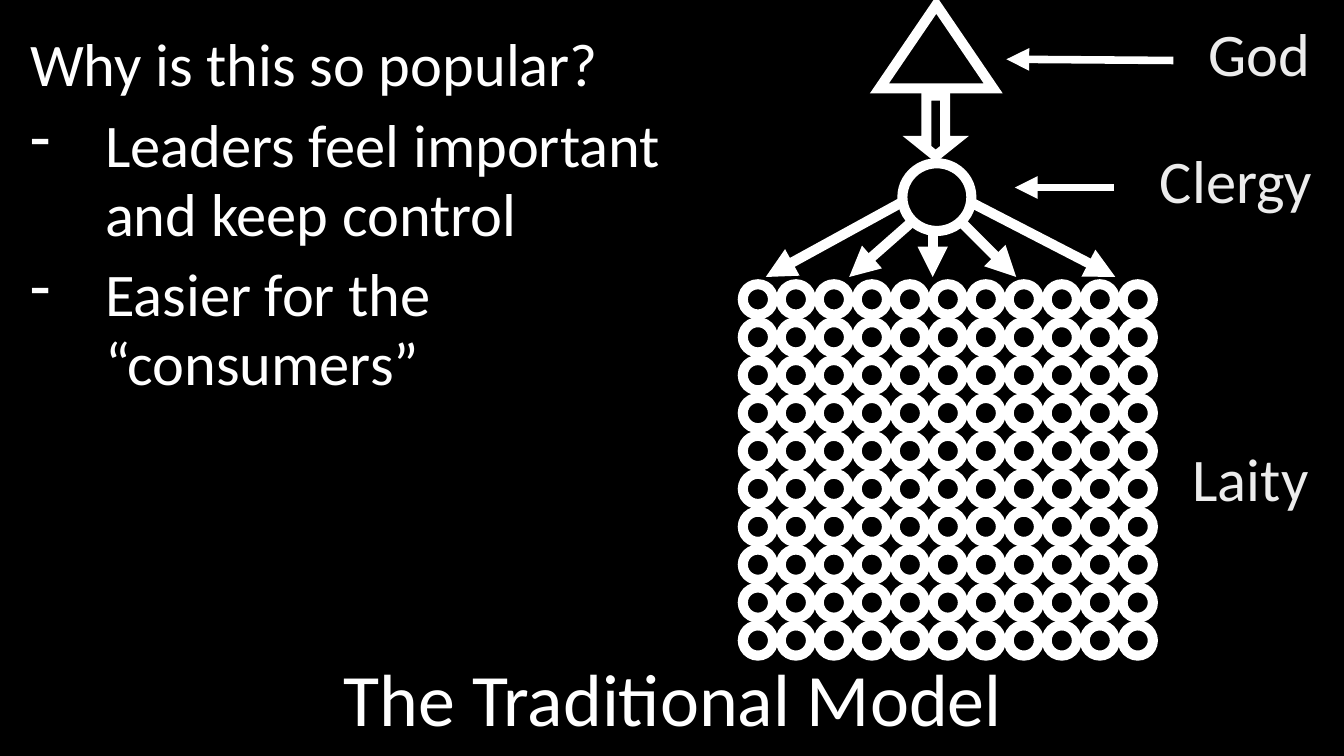
from dataclasses import dataclass
from lxml.etree import SubElement as Sub
from pptx import Presentation
from pptx.dml.color import RGBColor as Color
from pptx.enum.shapes import MSO_CONNECTOR as Link, MSO_SHAPE as Kind
from pptx.enum.text import MSO_ANCHOR as Anchor, PP_ALIGN as Align
from pptx.oxml.ns import qn
from pptx.util import Inches, Pt


@dataclass
class Theme:
    back = Color.from_string("000000")
    white = Color.from_string("FFFFFF")
    pale = Color.from_string("ECECEC")
    font = "Calibri"
    title = Pt(44)
    body = Pt(36)
    bold = Pt(6)
    thin = Pt(4.5)


def write(home, spot, lines, size, color):
    box = home.shapes.add_textbox(*map(Inches, spot))
    frame = box.text_frame
    frame.word_wrap = True
    for num, line in enumerate(lines):
        para = frame.add_paragraph() if num else frame.paragraphs[0]
        run = para.add_run()
        run.text = line
        run.font.name = Theme.font
        run.font.size = size
        run.font.color.rgb = color
    return frame


def arrow(home, start, end, width):
    line = home.shapes.add_connector(Link.STRAIGHT, *map(Inches, start + end))
    line.line.color.rgb = Theme.white
    line.line.width = width
    props = line.element.spPr
    Sub(props.find(qn("a:ln")), qn("a:tailEnd"), type="triangle")
    Sub(props, qn("a:effectLst"))


deck = Presentation()
deck.slide_width = Inches(11.11)
deck.slide_height = Inches(6.25)
slide = deck.slides.add_slide(deck.slide_layouts[6])
slide.background.fill.solid()
slide.background.fill.fore_color.rgb = Theme.back

title = write(slide, (0.15, 5.38, 10.83, 0.76), ["The Traditional Model"],
              Theme.title, Theme.white)
title.vertical_anchor = Anchor.MIDDLE
title.paragraphs[0].alignment = Align.CENTER

points = ["Why is this so popular?",
          "Leaders feel important and keep control",
          "Easier for the “consumers”"]
body = write(slide, (0.15, 0.21, 5.63, 5.07), points, Theme.body, Theme.white)
for num, para in enumerate(body.paragraphs):
    para.line_spacing = 0.95
    para.space_before = Pt(7)
    dent = Inches(0.62 if num else 0.38)
    props = para._p.get_or_add_pPr()
    props.set("marL", str(dent))
    props.set("indent", str(-dent))
    if num:
        Sub(props, qn("a:buChar"), char="-")

model = slide.shapes.add_group_shape()
parts = [(Kind.OVAL, (7.46, 1.35, 0.57, 0.56), []),
         (Kind.ISOSCELES_TRIANGLE, (7.27, 0.04, 0.94, 0.69), [0.5]),
         (Kind.DOWN_ARROW, (7.58, 0.79, 0.31, 0.5), [0.5, 0.4])]
cols, rows = 11, 10
for row in range(rows):
    for col in range(cols):
        left = 6.14 + 3.14 * col / (cols - 1)
        top = 2.35 + 2.82 * row / (rows - 1)
        parts.append((Kind.OVAL, (left, top, 0.25, 0.25), []))

for kind, spot, bends in parts:
    shape = model.shapes.add_shape(kind, *map(Inches, spot))
    shape.shadow.inherit = False
    shape.fill.background()
    shape.line.color.rgb = Theme.white
    shape.line.width = Theme.bold
    Sub(shape.element.spPr.find(qn("a:ln")), qn("a:miter"), lim="800000")
    for num, bend in enumerate(bends):
        shape.adjustments[num] = bend

rays = [((7.46, 1.67), (6.33, 2.29)),
        ((7.52, 1.85), (7.02, 2.29)),
        ((7.71, 1.92), (7.71, 2.29)),
        ((7.96, 1.85), (8.4, 2.29)),
        ((8.02, 1.67), (9.22, 2.29))]
for start, end in rays:
    arrow(model, start, end, Theme.bold)

roles = [("God", (9.89, 0.08, 1.23, 0.71), (9.7, 0.5), (8.32, 0.49)),
         ("Clergy", (9.49, 1.13, 1.62, 0.71), (9.21, 1.55), (8.39, 1.55))]
for name, spot, start, end in roles:
    group = slide.shapes.add_group_shape()
    write(group, spot, [name], Theme.body, Theme.pale)
    arrow(group, start, end, Theme.thin)
write(slide, (9.76, 3.6, 1.35, 0.71), ["Laity"], Theme.body, Theme.pale)

deck.save("out.pptx")
